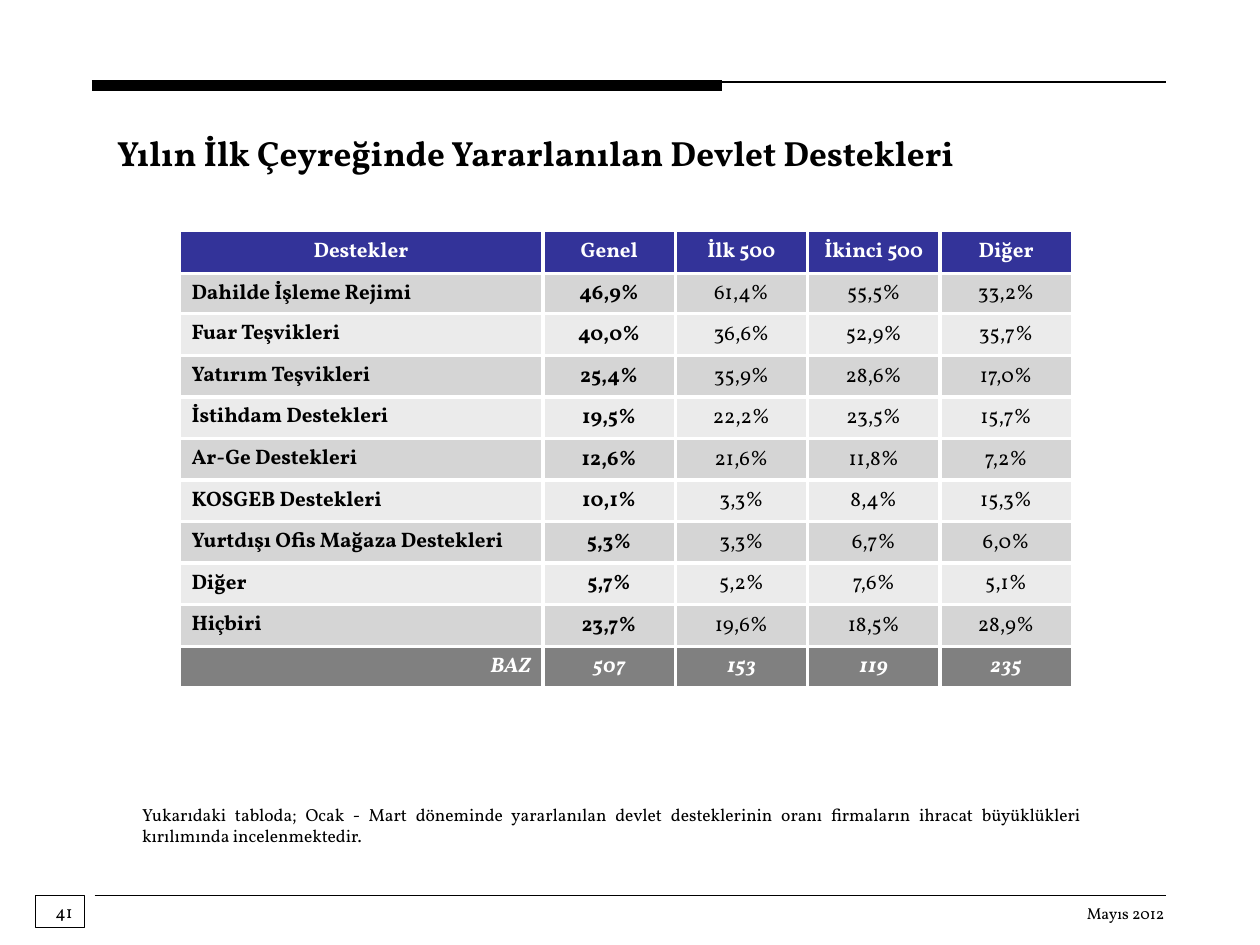
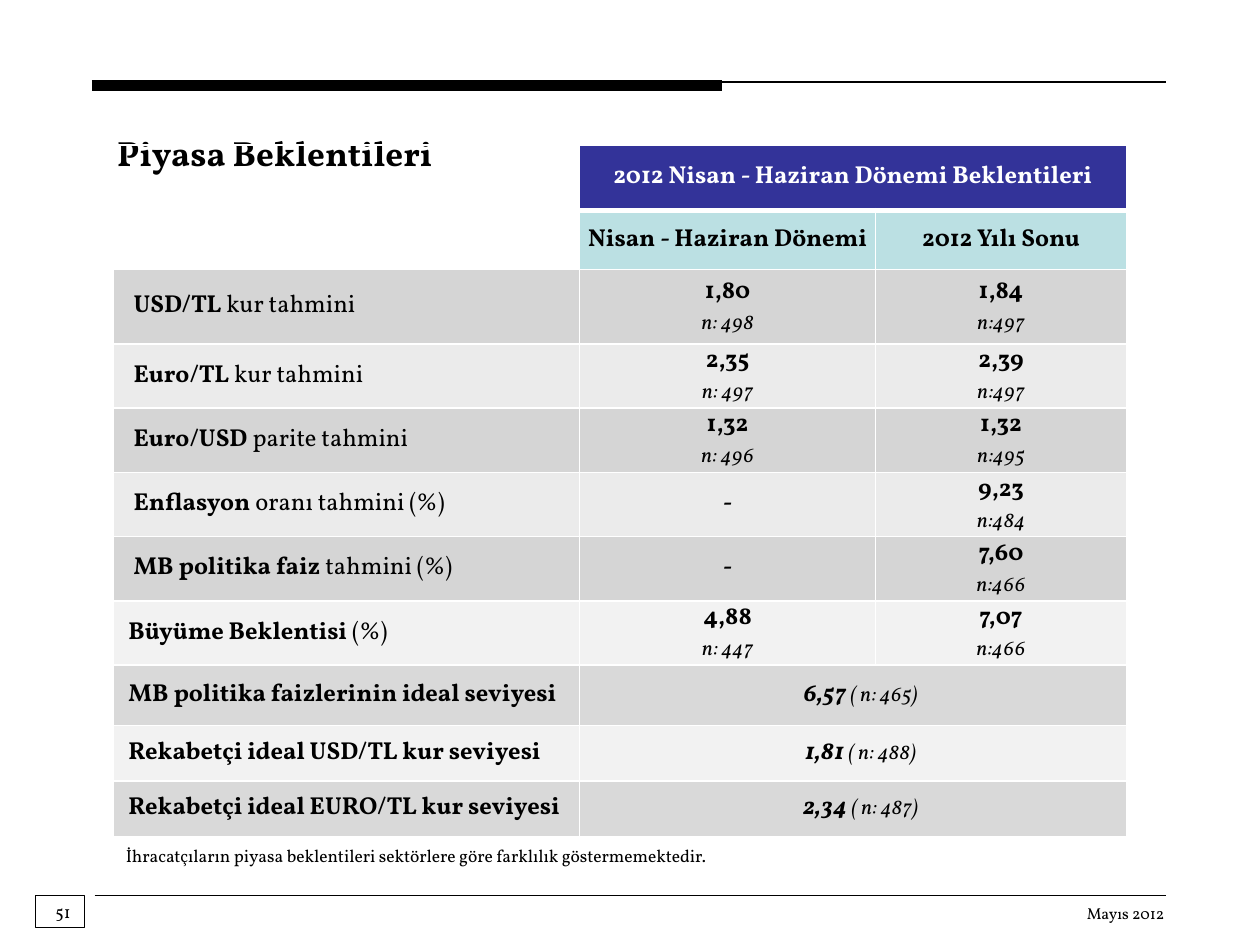
"""Build two slides of an exporters' survey: state supports used and market expectations."""
from lxml import etree
from pptx import Presentation
from pptx import util as u
from pptx.dml import color
from pptx.enum import shapes, text
from pptx.oxml import ns

FONT = "Vollkorn"
BLACK, WHITE, NAVY, AQUA, GREY = "000000", "FFFFFF", "333399", "BBE0E3", "808080"
DARK, LIGHT, PALE, SILVER = "D5D5D5", "EBEBEB", "F2F2F2", "D9D9D9"
LEFT, CENTER, RIGHT, JUSTIFY = (
    text.PP_ALIGN.LEFT, text.PP_ALIGN.CENTER, text.PP_ALIGN.RIGHT, text.PP_ALIGN.JUSTIFY)
TOP, MIDDLE, BOTTOM = (
    text.MSO_ANCHOR.TOP, text.MSO_ANCHOR.MIDDLE, text.MSO_ANCHOR.BOTTOM)
rgb = color.RGBColor.from_string

deck = Presentation()
deck.slide_width, deck.slide_height = u.Inches(10), u.Inches(7.5)


def area(*shares):
    """Turn x, y, x, y percentages of the slide into lengths."""
    sides = (deck.slide_width, deck.slide_height) * 2
    return [u.Emu(round(side * share / 100)) for side, share in zip(sides, shares)]


def write(frame, lines, align=LEFT, anchor=TOP, margins=(0.1, 0.05, 0.1, 0.05), wrap=True):
    """Fill a text frame or cell with lines of (text, size, colour, bold, italic) spans."""
    for side, inset in zip(("left", "top", "right", "bottom"), margins):
        setattr(frame, f"margin_{side}", u.Inches(inset))
    frame.vertical_anchor, frame.word_wrap = anchor, wrap
    body = getattr(frame, "text_frame", frame)
    for number, line in enumerate(lines):
        para = body.add_paragraph() if number else body.paragraphs[0]
        para.alignment = align
        for words, size, ink, bold, italic in line:
            span = para.add_run()
            span.text = words
            looks = {"name": FONT, "size": u.Pt(size), "bold": bold, "italic": italic}
            for key, value in looks.items():
                setattr(span.font, key, value)
            span.font.color.rgb = rgb(ink)


pages = [
    {"number": "41", "title": "Yılın İlk Çeyreğinde Yararlanılan Devlet Destekleri",
     "title_width": 84.5, "note_area": (10.3, 84.4, 76.4, 8),
     "note": "Yukarıdaki tabloda; Ocak - Mart döneminde yararlanılan devlet desteklerinin "
             "oranı firmaların ihracat büyüklükleri kırılımında incelenmektedir.",
     "table_area": (14.2, 24.4, 71, 48.8), "columns": [28.9] + [10.5] * 4,
     "rows": [4.53, 4.27] + [4.4] * 9, "border": 2.25, "header_border": 2.25},
    {"number": "51", "title": "Piyasa Beklentileri",
     "title_width": 27.6, "note_area": (9, 88.8, 76.4, 5.87),
     "note": "İhracatçıların piyasa beklentileri sektörlere göre farklılık göstermemektedir.",
     "table_area": (9, 15.33, 80.3, 73.47), "columns": [37, 23.5, 19.9],
     "rows": [6.93, 6.27, 7.87] + [6.8] * 5 + [6.4, 5.87, 5.87],
     "border": 1, "header_border": 3},
]
rules = [((7.5, 94.8, 92.5, 94.8), 0.75), ((7.3, 9.07, 57.3, 9.07), 6),
         ((7.5, 8.67, 92.5, 8.67), 0.75)]
tables = []

for plan in pages:
    page = deck.slides.add_slide(deck.slide_layouts[5])
    for ends, weight in rules:
        rule = page.shapes.add_connector(shapes.MSO_CONNECTOR.STRAIGHT, *area(*ends))
        rule.line.color.rgb, rule.line.width = rgb(BLACK), u.Pt(weight)
        etree.SubElement(rule._element.spPr, ns.qn("a:effectLst"))

    date = page.shapes.add_textbox(*area(85.1, 94.93, 8.3, 3.33))
    write(date.text_frame, [[("Mayıs 2012", 9, BLACK, False, False)]], RIGHT, wrap=False)

    badge = page.shapes.add_shape(
        shapes.MSO_SHAPE.RECTANGLE, *area(2.8, 94.8, 3.9, 3.33))
    badge.shadow.inherit = False
    badge.fill.background()
    badge.line.color.rgb, badge.line.width = rgb(BLACK), u.Pt(0.75)
    write(badge.text_frame, [[(plan["number"], 10, BLACK, False, False)]],
          margins=(0.16, 0.04, 0, 0), wrap=False)

    title = page.shapes.title
    title.left, title.top, title.width, title.height = area(
        8.3, 13.2, plan["title_width"], 5.87)
    title.text_frame.auto_size = text.MSO_AUTO_SIZE.NONE
    write(title.text_frame, [[(plan["title"], 20, BLACK, True, False)]])

    note = page.shapes.add_textbox(*area(*plan["note_area"]))
    write(note.text_frame, [[(plan["note"], 10, BLACK, False, False)]], JUSTIFY)

    table = page.shapes.add_table(
        len(plan["rows"]), len(plan["columns"]), *area(*plan["table_area"])).table
    table.first_row = table.horz_banding = False
    for column, share in zip(table.columns, plan["columns"]):
        column.width = area(share)[0]
    for row, share in zip(table.rows, plan["rows"]):
        row.height = area(0, share)[1]
    for r, row in enumerate(table.rows):
        for cell in row.cells:
            cell.fill.background()
            for position, side in enumerate("LRTB"):
                below_header = (r, side) in ((0, "B"), (1, "T"))
                weight = plan["header_border" if below_header else "border"]
                edge = etree.Element(ns.qn(f"a:ln{side}"), w=str(u.Pt(weight)))
                paint = etree.SubElement(edge, ns.qn("a:solidFill"))
                etree.SubElement(paint, ns.qn("a:srgbClr"), val=WHITE)
                cell._tc.get_or_add_tcPr().insert(position, edge)
    tables.append(table)

supports, outlook = tables

support_rows = [
    ("Destekler", "Genel", "İlk 500", "İkinci 500", "Diğer"),
    ("Dahilde İşleme Rejimi", "46,9%", "61,4%", "55,5%", "33,2%"),
    ("Fuar Teşvikleri", "40,0%", "36,6%", "52,9%", "35,7%"),
    ("Yatırım Teşvikleri", "25,4%", "35,9%", "28,6%", "17,0%"),
    ("İstihdam Destekleri", "19,5%", "22,2%", "23,5%", "15,7%"),
    ("Ar-Ge Destekleri", "12,6%", "21,6%", "11,8%", "7,2%"),
    ("KOSGEB Destekleri", "10,1%", "3,3%", "8,4%", "15,3%"),
    ("Yurtdışı Ofis Mağaza Destekleri", "5,3%", "3,3%", "6,7%", "6,0%"),
    ("Diğer", "5,7%", "5,2%", "7,6%", "5,1%"),
    ("Hiçbiri", "23,7%", "19,6%", "18,5%", "28,9%"),
    ("BAZ", "507", "153", "119", "235"),
]
last = len(support_rows) - 1
for r, values in enumerate(support_rows):
    inner = 0 < r < last
    fill = {0: NAVY, last: GREY}.get(r, DARK if r % 2 else LIGHT)
    for c, value in enumerate(values):
        cell = supports.cell(r, c)
        cell.fill.solid()
        cell.fill.fore_color.rgb = rgb(fill)
        align = CENTER if c or r == 0 else RIGHT if r == last else LEFT
        figure = inner and c > 0
        span = (value, 12, BLACK if inner else WHITE, not inner or c < 2, r == last)
        write(cell, [[span]], align, MIDDLE if figure else BOTTOM,
              (0.01, 0.01, 0.01, 0) if figure else (0.1, 0.05, 0.1, 0.05))

headings = [(0, 1, "2012 Nisan - Haziran Dönemi Beklentileri", WHITE, NAVY),
            (1, 1, "Nisan - Haziran Dönemi", BLACK, AQUA),
            (1, 2, "2012 Yılı Sonu", BLACK, AQUA)]
for r, c, heading, ink, fill in headings:
    cell = outlook.cell(r, c)
    cell.fill.solid()
    cell.fill.fore_color.rgb = rgb(fill)
    write(cell, [[(heading, 14, ink, True, False)]], CENTER, MIDDLE, (0, 0, 0, 0))

forecasts = [
    ("USD/TL", " kur tahmini", DARK, 0.16, ("1,80", "n: 498"), ("1,84", "n:497")),
    ("Euro/TL", " kur tahmini", LIGHT, 0.16, ("2,35", "n: 497"), ("2,39", "n:497")),
    ("Euro/USD", " parite tahmini", DARK, 0.16, ("1,32", "n: 496"), ("1,32", "n:495")),
    ("Enflasyon", " oranı tahmini (%)", LIGHT, 0.16, ("-",), ("9,23", "n:484")),
    ("MB politika faiz", " tahmini (%)", DARK, 0.16, ("-",), ("7,60", "n:466")),
    ("Büyüme Beklentisi", " (%)", PALE, 0.12, ("4,88", "n: 447"), ("7,07", "n:466")),
    ("MB politika faizlerinin ideal seviyesi", "", SILVER, 0.12, ("6,57", " ( n: 465)")),
    ("Rekabetçi ideal USD/TL kur seviyesi", "", PALE, 0.12, ("1,81", " ( n: 488)")),
    ("Rekabetçi ideal EURO/TL kur seviyesi", "", SILVER, 0.12, ("2,34", " ( n: 487)")),
]
outlook.cell(0, 1).merge(outlook.cell(0, 2))
for r, (subject, detail, fill, indent, *answers) in enumerate(forecasts, 2):
    for cell in outlook.rows[r].cells:
        cell.fill.solid()
        cell.fill.fore_color.rgb = rgb(fill)
    label = [(subject, 14, BLACK, True, False)]
    if detail:
        label.append((detail, 14, BLACK, False, False))
    write(outlook.cell(r, 0), [label], LEFT, MIDDLE, (indent, 0, 0, 0))
    ideal = len(answers) == 1
    if ideal:
        outlook.cell(r, 1).merge(outlook.cell(r, 2))
    for c, (value, *sample) in enumerate(answers, 1):
        spans = [(value, 14, BLACK, True, ideal or value == "-")]
        spans += [(count, 12, BLACK, False, True) for count in sample]
        lines = [spans] if ideal else [[span] for span in spans]
        write(outlook.cell(r, c), lines, CENTER, MIDDLE, (0.12 if ideal else 0, 0, 0, 0))

deck.save("out.pptx")
